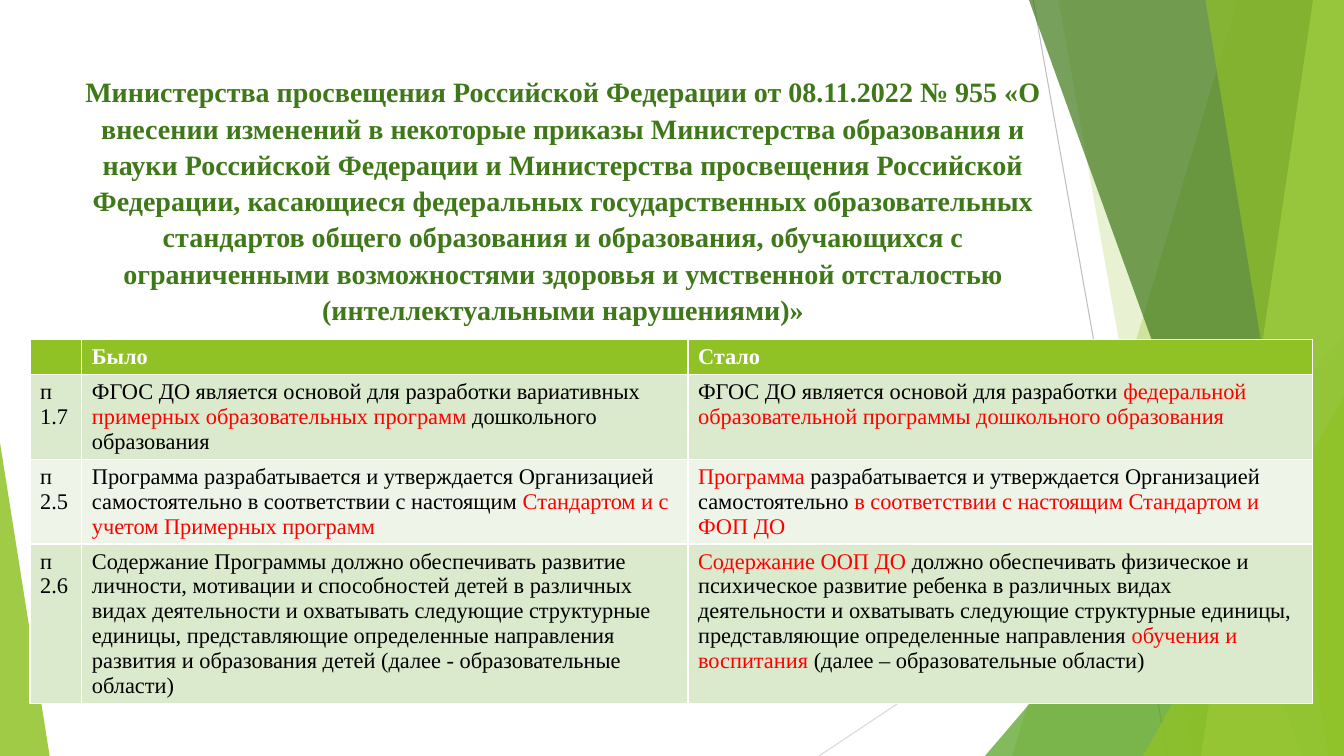
"""Builds a slide comparing the old and new wording of the preschool standard."""
import pptx
import pptx.dml.color
import pptx.enum.shapes
import pptx.enum.text
import pptx.oxml
import pptx.oxml.ns
import pptx.util

Pt = pptx.util.Pt

COLOURS = {
    "lime": "90C226", "leaf": "54A021", "forest": "3F7819", "pale": "C0E474",
    "line_dark": "BFBFBF", "line_light": "D9D9D9", "white": "FFFFFF",
    "black": "000000", "red": "FF0000", "band_odd": "DBE9CD", "band_even": "EEF4E8",
}
FONT = "Times New Roman"
WIDTH, HEIGHT = 960, 540

TITLE = (
    "Министерства просвещения Российской Федерации от 08.11.2022 № 955 «О внесении "
    "изменений в некоторые приказы Министерства образования и науки Российской Федерации "
    "и Министерства просвещения Российской Федерации, касающиеся федеральных "
    "государственных образовательных стандартов общего образования и образования, "
    "обучающихся с ограниченными возможностями здоровья и умственной отсталостью "
    "(интеллектуальными нарушениями)»"
)
COLUMN_WIDTHS = [37, 433, 446]
ROW_HEIGHTS = [25, 60.5, 60.5, 113.5]
ROWS = [
    ["", "Было", "Стало"],
    ["п 1.7",
     "ФГОС ДО является основой для разработки вариативных "
     "|примерных образовательных программ |дошкольного образования",
     "ФГОС ДО является основой для разработки "
     "|федеральной образовательной программы дошкольного образования"],
    ["п 2.5",
     "Программа разрабатывается и утверждается Организацией самостоятельно "
     "в соответствии с настоящим |Стандартом и с учетом Примерных программ",
     "|Программа| разрабатывается и утверждается Организацией самостоятельно "
     "|в соответствии с настоящим Стандартом и ФОП ДО"],
    ["п 2.6",
     "Содержание Программы должно обеспечивать развитие личности, мотивации и "
     "способностей детей в различных видах деятельности и охватывать следующие "
     "структурные единицы, представляющие определенные направления развития и "
     "образования детей (далее - образовательные области)",
     "|Содержание ООП ДО |должно обеспечивать физическое и психическое развитие "
     "ребенка в различных видах деятельности и охватывать следующие структурные "
     "единицы, представляющие определенные направления |обучения и воспитания"
     "| (далее – образовательные области)"],
]


class SlideBuilder:
    """Holds the style and the current page, and draws each kind of element."""

    def __init__(self, page):
        self.page = page

    def colour(self, name):
        """Returns the named colour."""
        return pptx.dml.color.RGBColor.from_string(COLOURS[name])

    def style_font(self, font, size, colour, bold):
        """Applies the slide's typeface with a size, colour and weight."""
        font.name, font.size, font.bold = FONT, Pt(size), bold
        font.color.rgb = self.colour(colour)

    def tint(self, shape, colour, opacity):
        """Fills a shape with a translucent colour and no outline."""
        shape.shadow.inherit = False
        shape.line.fill.background()
        shape.fill.solid()
        shape.fill.fore_color.rgb = self.colour(colour)
        tone = shape.fill._xPr.find(".//" + pptx.oxml.ns.qn("a:srgbClr"))
        alpha = tone.makeelement(pptx.oxml.ns.qn("a:alpha"), {"val": str(opacity * 1000)})
        tone.append(alpha)

    def line(self, start, end, colour):
        """Draws a thin straight line."""
        line = self.page.shapes.add_connector(
            pptx.enum.shapes.MSO_CONNECTOR.STRAIGHT, *map(Pt, start + end))
        line.line.color.rgb = self.colour(colour)
        line.line.width = Pt(0.75)
        properties = line._element.spPr
        properties.append(properties.makeelement(pptx.oxml.ns.qn("a:effectLst"), {}))

    def band(self, top_left, bottom_left, colour, opacity):
        """Draws a slanted band that reaches the right edge of the page."""
        outline = self.page.shapes.build_freeform(top_left, 0, scale=Pt(1))
        outline.add_line_segments([(WIDTH, 0), (WIDTH, HEIGHT), (bottom_left, HEIGHT)])
        self.tint(outline.convert_to_shape(), colour, opacity)

    def corner(self, left, width, height, apex, colour, opacity):
        """Draws a right triangle that stands on the bottom edge."""
        shape = self.page.shapes.add_shape(
            pptx.enum.shapes.MSO_SHAPE.ISOSCELES_TRIANGLE,
            Pt(left), Pt(HEIGHT - height), Pt(width), Pt(height))
        shape.adjustments[0] = apex
        self.tint(shape, colour, opacity)

    def title(self, text, left, top, width, height):
        """Places and formats the title placeholder."""
        box = self.page.shapes.title
        box.left, box.top, box.width, box.height = map(Pt, (left, top, width, height))
        frame = box.text_frame
        frame.text = text
        frame.word_wrap = True
        frame.auto_size = pptx.enum.text.MSO_AUTO_SIZE.NONE
        frame.vertical_anchor = pptx.enum.text.MSO_ANCHOR.TOP
        para = frame.paragraphs[0]
        para.alignment = pptx.enum.text.PP_ALIGN.CENTER
        para.line_spacing = 1.08
        self.style_font(para.font, 20, "forest", True)

    def cell(self, cell, text, fill, colour, bold):
        """Fills a cell, with every second part of the text in red."""
        cell.fill.solid()
        cell.fill.fore_color.rgb = self.colour(fill)
        para = cell.text_frame.paragraphs[0]
        self.style_font(para.font, 16, colour, bold)
        for index, part in enumerate(text.split("|")):
            if part:
                span = para.add_run()
                span.text = part
                if index % 2:
                    span.font.color.rgb = self.colour("red")

    def table(self, rows, left, top):
        """Draws the comparison table with a header and banded rows."""
        table = self.page.shapes.add_table(
            len(rows), len(COLUMN_WIDTHS), Pt(left), Pt(top),
            Pt(sum(COLUMN_WIDTHS)), Pt(sum(ROW_HEIGHTS))).table
        for column, width in zip(table.columns, COLUMN_WIDTHS):
            column.width = Pt(width)
        for number, (row, height, texts) in enumerate(zip(table.rows, ROW_HEIGHTS, rows)):
            row.height = Pt(height)
            if number == 0:
                style = ("lime", "white", True)
            else:
                style = ("band_odd" if number % 2 else "band_even", "black", False)
            for cell, text in zip(row.cells, texts):
                self.cell(cell, text, *style)


def main():
    """Builds and saves the deck."""
    deck = pptx.Presentation()
    deck.slide_width, deck.slide_height = Pt(WIDTH), Pt(HEIGHT)
    builder = SlideBuilder(deck.slides.add_slide(deck.slide_layouts[5]))
    builder.line((738, 0), (834, HEIGHT), "line_dark")
    builder.line((WIDTH, 290), (585, HEIGHT), "line_light")
    builder.band(884, 723, "lime", 30)
    builder.band(756, 852, "lime", 20)
    builder.corner(703.5, 256.5, 300, 1, "leaf", 72)
    builder.band(735, 929.5, "forest", 70)
    builder.band(938, 858, "pale", 70)
    builder.band(861, 949, "lime", 65)
    builder.corner(816.5, 143.5, 257, 1, "lime", 80)
    builder.corner(0, 35.5, 224, 0, "lime", 85)
    builder.title(TITLE, 53.5, 48, 697.5, 165)
    builder.table(ROWS, 21.5, 242.5)
    deck.save("out.pptx")


if __name__ == "__main__":
    main()
